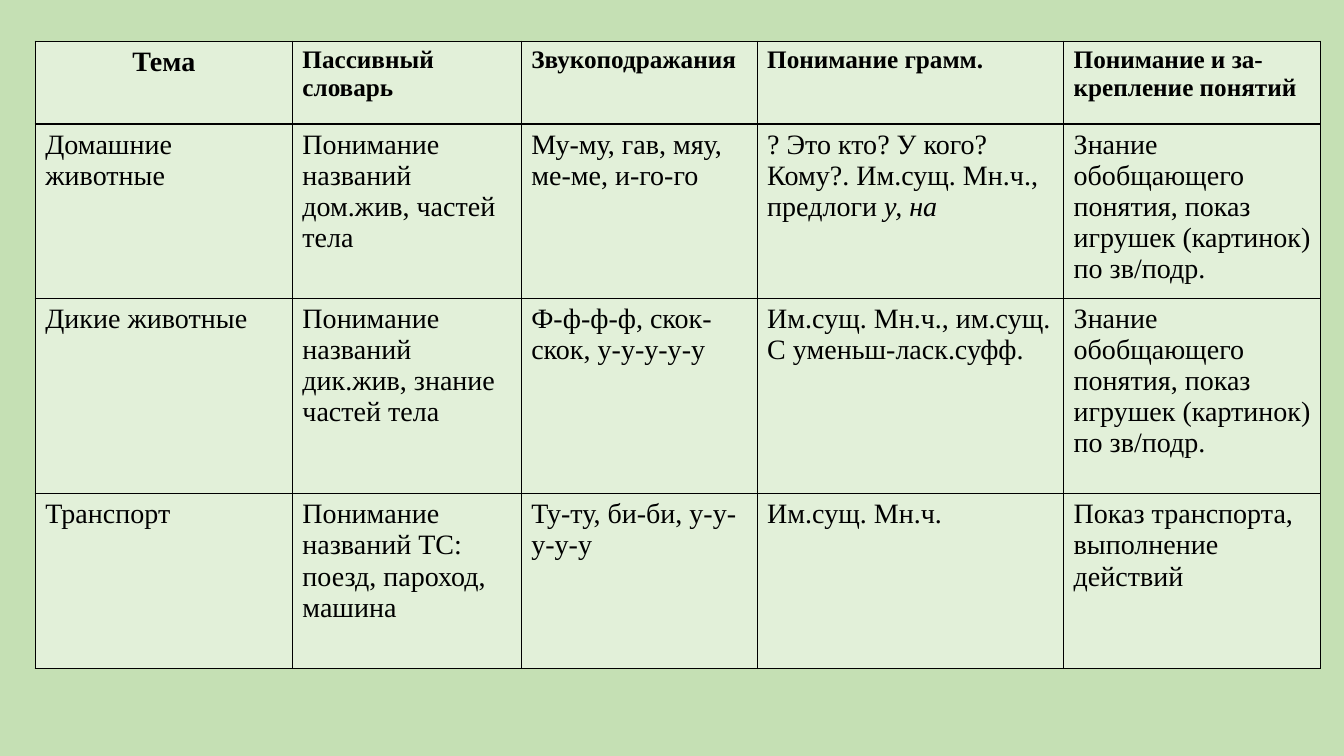
from lxml.etree import SubElement
from pptx import Presentation
from pptx.dml.color import RGBColor
from pptx.enum.text import PP_ALIGN
from pptx.oxml.ns import qn
from pptx.util import Inches, Pt

THEME = {
    "font": "Times New Roman",
    "background": RGBColor.from_string("C5E0B4"),
    "cell": RGBColor.from_string("E2F0D9"),
    "text": RGBColor.from_string("000000"),
    "border": "000000",
    "border_width": Pt(1),
    "body_size": Pt(20),
    "header_size": Pt(18),
}

SOUND_CONCEPTS = "Знание обобщающего понятия, показ игрушек (картинок) по зв/подр."
HEADERS = ["Тема", "Пассивный словарь", "Звукоподражания", "Понимание грамм.",
           "Понимание и за- крепление понятий"]
# A tuple holds plain text followed by italic text.
TOPICS = [
    ["Домашние животные", "Понимание названий дом.жив, частей тела",
     "Му-му, гав, мяу, ме-ме, и-го-го",
     ("? Это кто? У кого?Кому?. Им.сущ. Мн.ч., предлоги ", "у, на"), SOUND_CONCEPTS],
    ["Дикие животные", "Понимание названий дик.жив, знание частей тела",
     "Ф-ф-ф-ф, скок-скок, у-у-у-у-у",
     "Им.сущ. Мн.ч., им.сущ. С уменьш-ласк.суфф.", SOUND_CONCEPTS],
    ["Транспорт", "Понимание названий ТС: поезд, пароход, машина",
     "Ту-ту, би-би, у-у-у-у-у", "Им.сущ. Мн.ч.",
     "Показ транспорта, выполнение действий"],
]
COLUMN_WIDTHS = [2.55, 2.27, 2.34, 3.04, 2.55]
ROW_HEIGHTS = [0.82, 1.73, 1.94, 1.73]
TABLE_LEFT, TABLE_TOP = 0.35, 0.41


def add_borders(cell):
    properties = cell._tc.get_or_add_tcPr()
    for position, side in enumerate(("lnL", "lnR", "lnT", "lnB")):
        line = SubElement(properties, qn(f"a:{side}"), w=str(THEME["border_width"]))
        fill = SubElement(line, qn("a:solidFill"))
        SubElement(fill, qn("a:srgbClr"), val=THEME["border"])
        properties.insert(position, line)  # borders come before the cell fill


def fill_cell(cell, content, is_header, is_topic):
    cell.fill.solid()
    cell.fill.fore_color.rgb = THEME["cell"]
    add_borders(cell)
    plain, italic = content if isinstance(content, tuple) else (content, "")
    paragraph = cell.text_frame.paragraphs[0]
    paragraph.add_run().text = plain
    if italic:
        emphasis = paragraph.add_run()
        emphasis.text = italic
        emphasis.font.italic = True
    small = is_header and not is_topic
    paragraph.font.name = THEME["font"]
    paragraph.font.size = THEME["header_size" if small else "body_size"]
    paragraph.font.bold = is_header
    paragraph.font.color.rgb = THEME["text"]
    if is_header and is_topic:
        paragraph.alignment = PP_ALIGN.CENTER


def main():
    presentation = Presentation()
    presentation.slide_width, presentation.slide_height = Inches(13.33), Inches(7.5)
    slide = presentation.slides.add_slide(presentation.slide_layouts[6])
    slide.background.fill.solid()
    slide.background.fill.fore_color.rgb = THEME["background"]

    rows = [HEADERS, *TOPICS]
    table = slide.shapes.add_table(
        len(rows), len(HEADERS), Inches(TABLE_LEFT), Inches(TABLE_TOP),
        Inches(sum(COLUMN_WIDTHS)), Inches(sum(ROW_HEIGHTS))).table
    table.horz_banding = False
    for column, width in zip(table.columns, COLUMN_WIDTHS):
        column.width = Inches(width)
    for row, height in zip(table.rows, ROW_HEIGHTS):
        row.height = Inches(height)
    for row_index, contents in enumerate(rows):
        for column_index, content in enumerate(contents):
            fill_cell(table.cell(row_index, column_index), content,
                      row_index == 0, column_index == 0)

    presentation.save("out.pptx")


if __name__ == "__main__":
    main()
